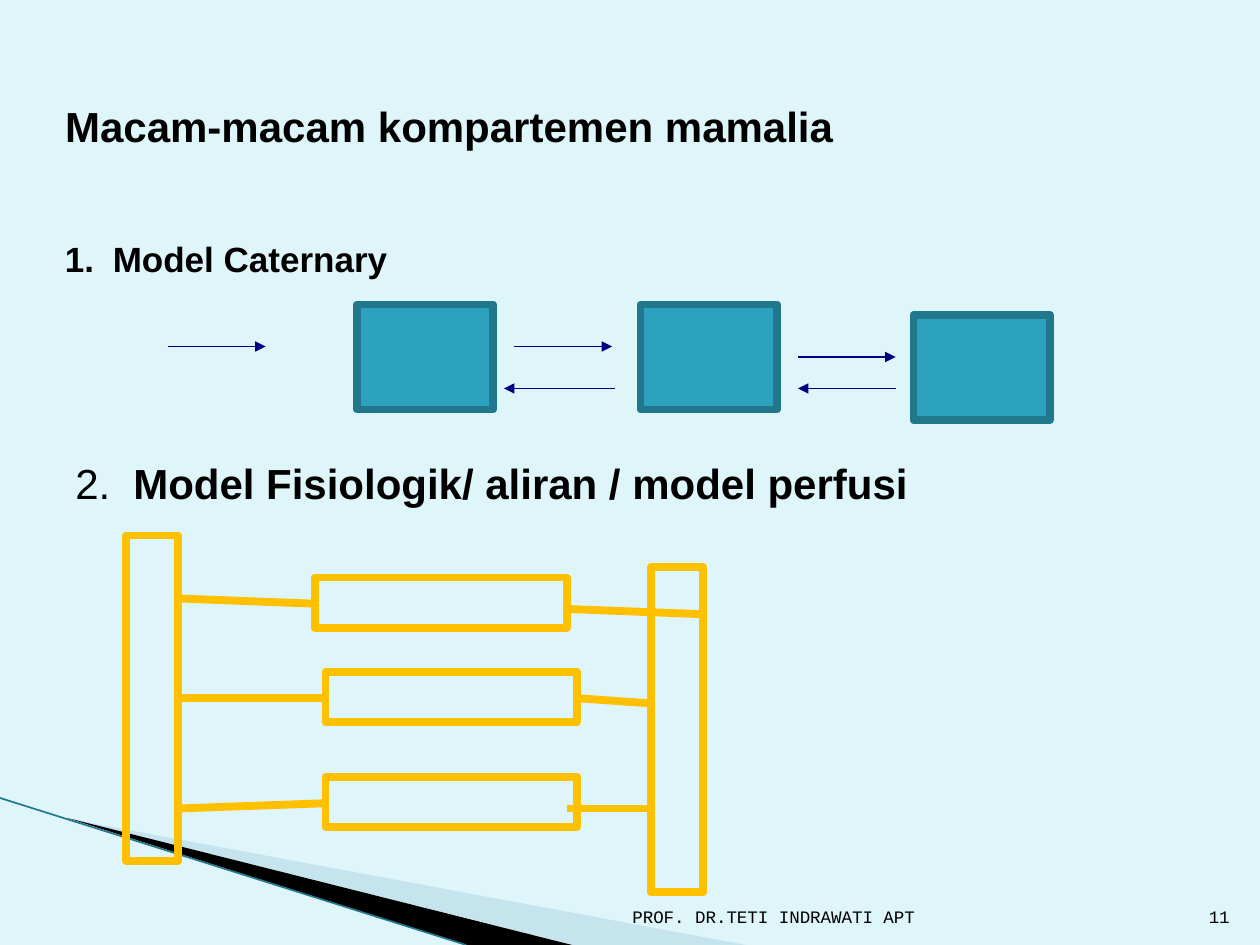
from dataclasses import dataclass

from lxml.etree import SubElement
from pptx import Presentation
from pptx.dml.color import RGBColor
from pptx.enum.shapes import MSO_CONNECTOR, MSO_SHAPE
from pptx.enum.text import MSO_ANCHOR, PP_ALIGN
from pptx.oxml.ns import qn
from pptx.util import Inches, Pt

COLUMNS, ROWS = 120, 90
CELL = Inches(10) / COLUMNS

BLACK = RGBColor(0x00, 0x00, 0x00)
PALE_BLUE = RGBColor(0xDE, 0xF5, 0xFA)
MIST = RGBColor(0xA0, 0xCB, 0xDC)
TEAL = RGBColor(0x2D, 0xA2, 0xBF)
DARK_TEAL = RGBColor(0x21, 0x78, 0x8D)
NAVY = RGBColor(0x00, 0x00, 0x80)
AMBER = RGBColor(0xFF, 0xC0, 0x00)


@dataclass
class Box:
    """A region of the slide, in grid columns and rows."""
    left: float
    top: float
    width: float
    height: float

    def inner(self, column, row, width, height):
        return Box(self.left + column, self.top + row, width, height)

    def point(self, column, row):
        return cells(self.left + column, self.top + row)

    def frame(self):
        return cells(self.left, self.top, self.width, self.height)


def cells(*counts):
    return [round(count * CELL) for count in counts]


def add_line(slide, start, end, color, weight, arrow=False):
    connector = slide.shapes.add_connector(MSO_CONNECTOR.STRAIGHT, *start, *end)
    connector.line.color.rgb = color
    connector.line.width = Pt(weight)
    if arrow:
        SubElement(connector.line._get_or_add_ln(), qn("a:tailEnd"), type="triangle")
    SubElement(connector._element.spPr, qn("a:effectLst"))


def add_block(slide, box, border, fill=None):
    block = slide.shapes.add_shape(MSO_SHAPE.RECTANGLE, *box.frame())
    block.shadow.inherit = False
    if fill is None:
        block.fill.background()
    else:
        block.fill.solid()
        block.fill.fore_color.rgb = fill
    block.line.color.rgb = border
    block.line.width = Pt(4.5)


def set_font(paragraph, size, bold=None, name="Arial"):
    font = paragraph.font
    font.name, font.size, font.bold = name, Pt(size), bold
    font.color.rgb = BLACK


def add_text(slide, box, text):
    frame = slide.shapes.add_textbox(*box.frame()).text_frame
    frame.word_wrap = True
    paragraph = frame.paragraphs[0]
    paragraph.text = text
    return frame, paragraph


def set_hanging(paragraph, indent):
    properties = paragraph._p.get_or_add_pPr()
    properties.set("marL", str(Inches(indent)))
    properties.set("indent", str(-Inches(indent)))
    return properties


def draw_wedge(slide, box, corners, color, opacity=100):
    points = [box.point(*corner) for corner in corners]
    builder = slide.shapes.build_freeform(*points[0])
    builder.add_line_segments(points[1:], close=True)
    wedge = builder.convert_to_shape()
    wedge.shadow.inherit = False
    wedge.line.fill.background()
    wedge.fill.solid()
    wedge.fill.fore_color.rgb = color
    if opacity < 100:
        tint = wedge._element.spPr.find(".//" + qn("a:srgbClr"))
        SubElement(tint, qn("a:alpha"), val=str(opacity * 1000))


def draw_backdrop(slide, box):
    """Sloping wedges across the lower left corner."""
    slide.background.fill.solid()
    slide.background.fill.fore_color.rgb = PALE_BLUE
    bottom = box.height
    draw_wedge(slide, box, [(6.6, 2), (71, bottom), (54.7, bottom)], MIST, 40)
    draw_wedge(slide, box, [(6.4, 1.9), (54.5, bottom), (44.4, bottom)], BLACK)
    add_line(slide, box.point(0, 0), box.point(44.4, bottom), DARK_TEAL, 0.95)


def write_title(slide, box):
    title = slide.shapes.title
    title.left, title.top, title.width, title.height = box.frame()
    title.text_frame.vertical_anchor = MSO_ANCHOR.TOP
    title.text_frame.text = "Macam-macam kompartemen mamalia"
    paragraph = title.text_frame.paragraphs[0]
    paragraph.alignment = PP_ALIGN.LEFT
    set_font(paragraph, 24, True)


def write_headings(slide, caternary_box, flow_box):
    _, caternary = add_text(slide, caternary_box, "Model Caternary")
    SubElement(set_hanging(caternary, 0.38), qn("a:buAutoNum"), type="arabicPeriod")
    set_font(caternary, 20, True)

    _, flow = add_text(slide, flow_box, "2.\t")
    set_hanging(flow, 0.46)
    set_font(flow, 24)
    name = flow.add_run()
    name.text = "Model Fisiologik/ aliran / model perfusi"
    name.font.bold = True


def draw_caternary_model(slide, box):
    for column, row in [(18, 0), (45, 0), (71, 1)]:
        add_block(slide, box.inner(column, row, 13, 10), DARK_TEAL, TEAL)
    flows = [(0, 9.3, 4), (33, 42.3, 4), (42.6, 32, 8), (60, 69.3, 5), (69.3, 60, 8)]
    for start, end, row in flows:
        add_line(slide, box.point(start, row), box.point(end, row), NAVY, 0.75, arrow=True)


def draw_perfusion_model(slide, box):
    """Three organs between two upright vessels."""
    for column, row in [(18, 4), (19, 13), (19, 23)]:
        add_block(slide, box.inner(column, row, 24, 4.8), AMBER)
    for column, row in [(0, 0), (50, 3)]:
        add_block(slide, box.inner(column, row, 5, 31), AMBER)
    links = [
        ((5, 6), (18, 6.5)), ((42, 7), (55, 7.5)),
        ((5, 15.5), (19, 15.5)), ((43, 15.5), (50, 16)),
        ((5, 26), (19, 25.5)), ((42, 26), (50, 26)),
    ]
    for start, end in links:
        add_line(slide, box.point(*start), box.point(*end), AMBER, 4.5)


def write_footer(slide, box):
    author = box.inner(0, 0, 30.8, box.height)
    number = box.inner(box.width - 4.8, 0, 4.8, box.height)
    for part, text in [(author, "PROF. DR.TETI INDRAWATI APT"), (number, "11")]:
        frame, paragraph = add_text(slide, part, text)
        frame.vertical_anchor = MSO_ANCHOR.BOTTOM
        paragraph.alignment = PP_ALIGN.RIGHT
        set_font(paragraph, 10, name="Courier New")


def main():
    presentation = Presentation()
    presentation.slide_width, presentation.slide_height = cells(COLUMNS, ROWS)
    slide = presentation.slides.add_slide(presentation.slide_layouts[5])
    draw_backdrop(slide, Box(0, 76, COLUMNS, ROWS - 76))
    write_title(slide, Box(5, 9, 89, 11))
    write_headings(slide, Box(5, 22, 44, 9.2), Box(6, 43, 85, 6))
    draw_caternary_model(slide, Box(16, 29, 84, 11))
    draw_perfusion_model(slide, Box(12, 51, 55, 34))
    write_footer(slide, Box(57.5, 84.1, 60.8, 4.8))
    presentation.save("out.pptx")


if __name__ == "__main__":
    main()
